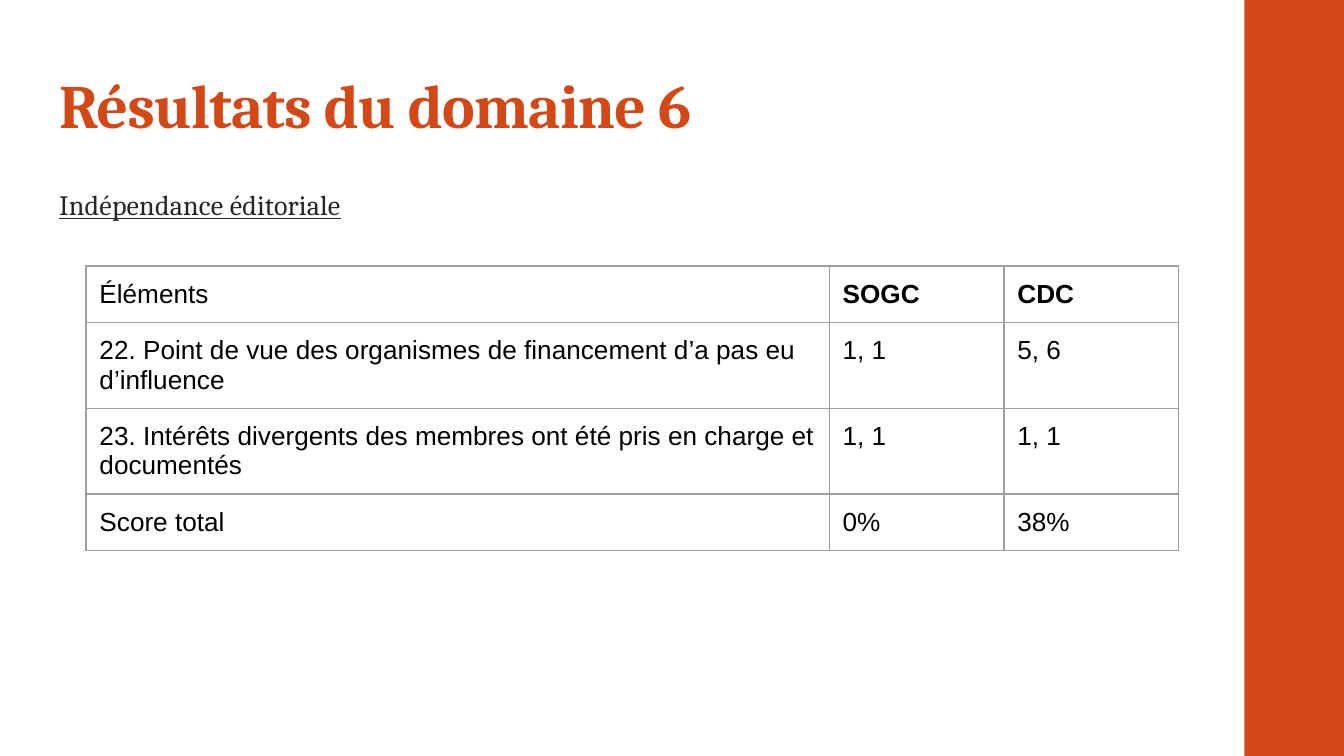
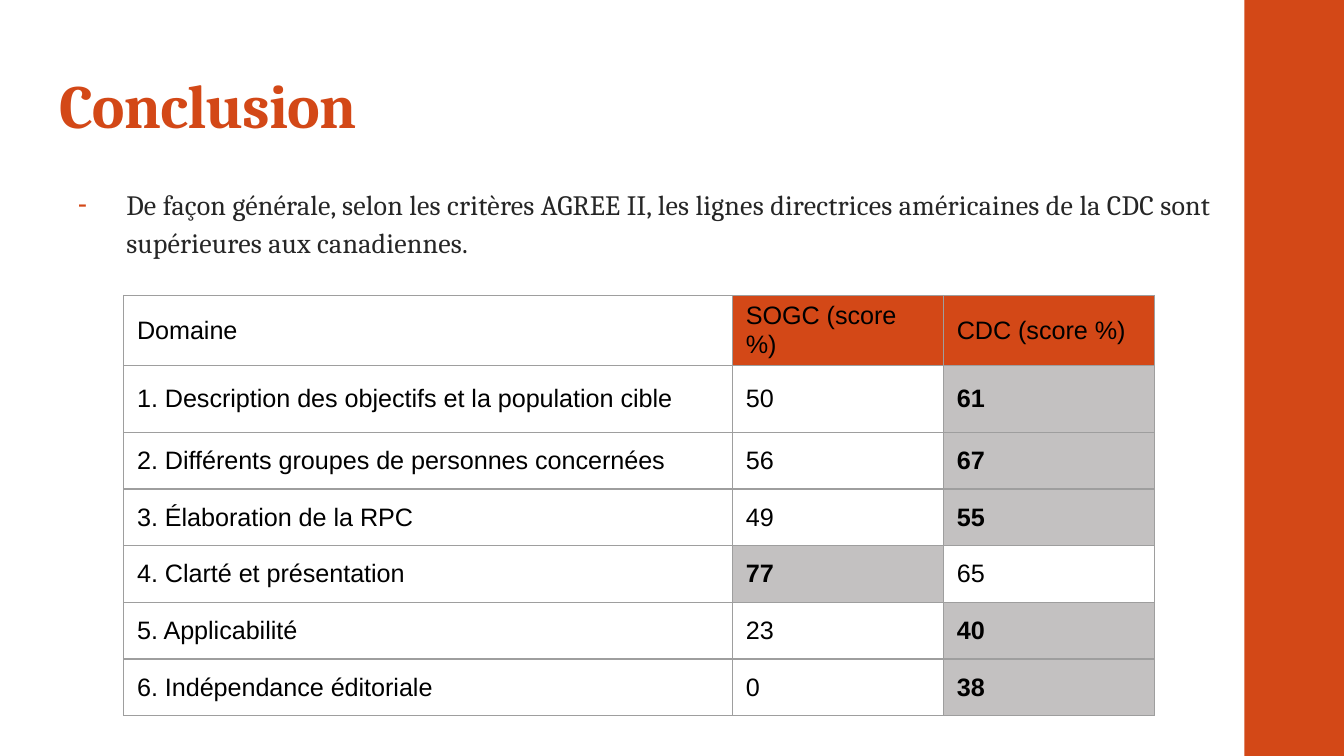
from lxml import etree
from pptx import Presentation
from pptx import util as u
from pptx.dml.color import RGBColor
from pptx.enum import shapes, text
from pptx.oxml.ns import qn

WIDTH, HEIGHT = u.Inches(10), u.Inches(5.625)
ORANGE, INK, BLACK, WHITE = "D34817", "262626", "000000", "FFFFFF"
WINNER, BORDER = "C3C1C1", "9E9E9E"
SERIF, SANS = "Cambria", "Arial"

# Boxes are left, top, width, height in percent of the slide.
BAND_BOX = (92.6, 0, 7.4, 100)
TITLE_BOX = (3.4, 8.7, 93.2, 11.2)
BODY_BOX = (3.4, 22.4, 88.3, 66.5)


def color(value):
    return RGBColor.from_string(value)


def across(percent):
    return u.Emu(round(WIDTH * percent / 100))


def down(percent):
    return u.Emu(round(HEIGHT * percent / 100))


def place(shape, box):
    left, top, width, height = box
    shape.left, shape.top = across(left), down(top)
    shape.width, shape.height = across(width), down(height)


def style(para, size, face, ink, bold=False, underline=False, tracking=0):
    """Format a whole paragraph; tracking is in hundredths of a point."""
    font = para.font
    font.size, font.name = u.Pt(size), face
    font.bold, font.underline = bold, underline
    font.color.rgb = color(ink)
    if tracking:
        para._p.pPr.find(qn("a:defRPr")).set("spc", str(tracking))


def set_margins(frame, inset):
    frame.margin_left = frame.margin_right = inset
    frame.margin_top = frame.margin_bottom = inset


def set_bullet(para, margin, indent, mark=None):
    props = para._p.get_or_add_pPr()
    props.set("marL", str(u.Inches(margin)))
    props.set("indent", str(u.Inches(indent)))
    if mark:
        tint = etree.SubElement(props, qn("a:buClr"))
        etree.SubElement(tint, qn("a:srgbClr"), val=ORANGE)
        etree.SubElement(props, qn("a:buChar"), char=mark)
    else:
        etree.SubElement(props, qn("a:buNone"))


def fill_placeholder(holder, box, words, spacing):
    place(holder, box)
    frame = holder.text_frame
    frame.text = words
    frame.word_wrap = True
    frame.auto_size = text.MSO_AUTO_SIZE.NONE
    set_margins(frame, u.Inches(0.1))
    para = frame.paragraphs[0]
    para.alignment = text.PP_ALIGN.LEFT
    para.line_spacing = spacing
    para.space_before = u.Pt(0)
    return para


def add_page(deck, title):
    page = deck.slides.add_slide(deck.slide_layouts[1])
    band = page.shapes.add_shape(shapes.MSO_SHAPE.RECTANGLE, 0, 0, 0, 0)
    place(band, BAND_BOX)
    band.shadow.inherit = False
    band.fill.solid()
    band.fill.fore_color.rgb = color(ORANGE)
    band.line.fill.background()
    para = fill_placeholder(page.shapes.title, TITLE_BOX, title, 0.9)
    style(para, 33, SERIF, ORANGE, bold=True, tracking=-40)
    return page


def add_body(page, words, margin, indent, after, mark=None, underline=False):
    para = fill_placeholder(page.placeholders[1], BODY_BOX, words, 1.14)
    para.space_after = u.Pt(after)
    set_bullet(para, margin, indent, mark)
    style(para, 15, SERIF, INK, underline=underline, tracking=10)


def set_borders(cell):
    props = cell._tc.get_or_add_tcPr()
    for side in ("lnL", "lnR", "lnT", "lnB"):
        line = etree.SubElement(props, qn(f"a:{side}"), w=str(u.Pt(0.75)))
        paint = etree.SubElement(line, qn("a:solidFill"))
        etree.SubElement(paint, qn("a:srgbClr"), val=BORDER)


def add_grid(page, corner, widths, heights, rows, size, look):
    """Add a table; look(row, column) gives each cell's fill and boldness."""
    left, top = corner
    frame = page.shapes.add_table(
        len(rows), len(widths), across(left), down(top),
        across(sum(widths)), down(sum(heights)))
    table = frame.table
    table.first_row = table.horz_banding = False
    for column, width in zip(table.columns, widths):
        column.width = across(width)
    for row, height in zip(table.rows, heights):
        row.height = down(height)
    for r, values in enumerate(rows):
        for c, value in enumerate(values):
            cell = table.cell(r, c)
            cell.text = str(value)
            fill, bold = look(r, c)
            set_borders(cell)
            cell.fill.solid()
            cell.fill.fore_color.rgb = color(fill)
            style(cell.text_frame.paragraphs[0], size, SANS, BLACK, bold)
    return table


def build_results(deck):
    page = add_page(deck, "Résultats du domaine 6")
    add_body(page, "Indépendance éditoriale", 0.15, -0.15, 1.5, underline=True)
    rows = [
        ("Éléments", "SOGC", "CDC"),
        ("22. Point de vue des organismes de financement d’a pas eu d’influence",
         "1, 1", "5, 6"),
        ("23. Intérêts divergents des membres ont été pris en charge et documentés",
         "1, 1", "1, 1"),
        ("Score total", "0%", "38%"),
    ]

    def look(r, c):
        return WHITE, r == 0 and c > 0

    table = add_grid(page, (6.4, 35.2), (55.3, 13, 13), (7.5, 11.3, 11.3, 7.5),
                     rows, 14, look)
    for cell in table.iter_cells():
        set_margins(cell, u.Inches(0.1))


def build_conclusion(deck):
    page = add_page(deck, "Conclusion")
    add_body(page, "De façon générale, selon les critères AGREE II, les lignes "
             "directrices américaines de la CDC sont supérieures aux canadiennes.",
             0.5, -0.36, 25, mark="-")
    rows = [
        ("Domaine", "SOGC (score %)", "CDC (score %)"),
        ("1. Description des objectifs et la population cible", 50, 61),
        ("2. Différents groupes de personnes concernées", 56, 67),
        ("3. Élaboration de la RPC", 49, 55),
        ("4. Clarté et présentation", 77, 65),
        ("5. Applicabilité", 23, 40),
        ("6. Indépendance éditoriale", 0, 38),
    ]

    def look(r, c):
        if c == 0:
            return WHITE, False
        if r == 0:
            return ORANGE, False
        best = rows[r][c] == max(rows[r][1:])
        return (WINNER if best else WHITE), best

    table = add_grid(page, (9.2, 39.1), (45.3, 15.7, 15.7),
                     (9.2, 8.9) + (7.5,) * 5, rows, 13.5, look)
    for cell in table.iter_cells():
        cell.vertical_anchor = text.MSO_ANCHOR.MIDDLE


def main():
    deck = Presentation()
    deck.slide_width, deck.slide_height = WIDTH, HEIGHT
    build_results(deck)
    build_conclusion(deck)
    deck.save("out.pptx")


if __name__ == "__main__":
    main()
